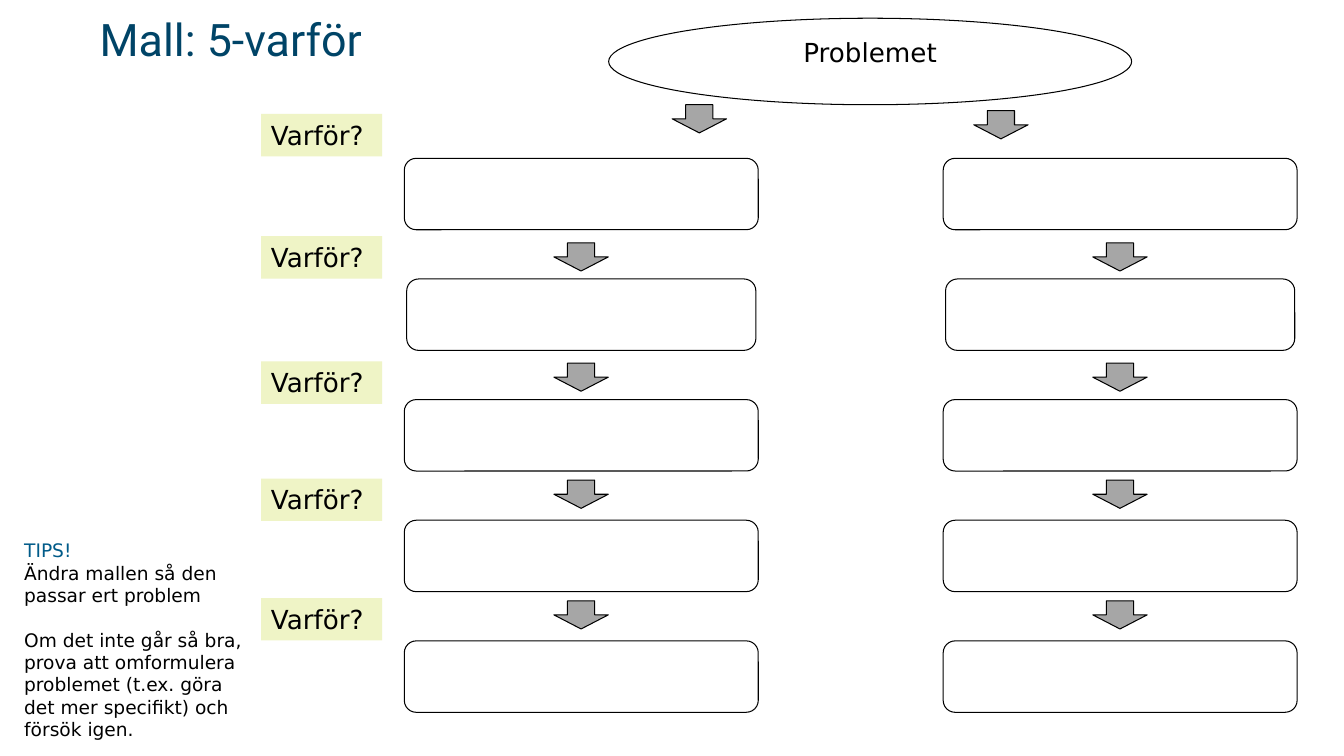
from pptx import Presentation
from pptx.dml.color import RGBColor
from pptx.enum.shapes import MSO_SHAPE
from pptx.enum.text import MSO_ANCHOR, MSO_AUTO_SIZE, PP_ALIGN
from pptx.util import Cm, Pt

ELLIPSE = MSO_SHAPE.OVAL
RECTANGLE = MSO_SHAPE.RECTANGLE
ROUNDED = MSO_SHAPE.ROUNDED_RECTANGLE
DOWN_ARROW = MSO_SHAPE.DOWN_ARROW
TOP = MSO_ANCHOR.TOP
GROW = MSO_AUTO_SIZE.SHAPE_TO_FIT_TEXT
LEFT, CENTER = PP_ALIGN.LEFT, PP_ALIGN.CENTER


def color(hex_string):
    return RGBColor.from_string(hex_string)


class TemplateSlide:
    BLACK, WHITE, GRAY, LIME = "000000", "FFFFFF", "A6A6A6", "EFF4C6"
    TITLE_BLUE, TIP_BLUE = "004467", "005B89"
    BODY_FONT, TITLE_FONT = "DejaVu Sans", "Roboto"
    LABEL_SIZE, TIP_SIZE, TITLE_SIZE = 18.7, 13.3, 32

    def __init__(self, slide):
        self.slide = slide

    def shape(self, kind, left, top, width, height, fill, outlined=True):
        shape = self.slide.shapes.add_shape(
            kind, Cm(left), Cm(top), Cm(width), Cm(height))
        shape.shadow.inherit = False
        shape.fill.solid()
        shape.fill.fore_color.rgb = color(fill)
        if outlined:
            shape.line.color.rgb = color(self.BLACK)
            shape.line.width = Pt(0.75)
        else:
            shape.line.fill.background()
        return shape

    def add_text(self, frame, paragraphs, size, font, align=LEFT):
        """Fill a frame from (text, color, space before) entries."""
        frame.word_wrap = True
        frame.vertical_anchor = TOP
        for index, (text, hex_string, space_before) in enumerate(paragraphs):
            paragraph = frame.add_paragraph() if index else frame.paragraphs[0]
            paragraph.alignment = align
            if space_before:
                paragraph.space_before = Pt(space_before)
            run = paragraph.add_run()
            run.text = text
            run.font.size = Pt(size)
            run.font.name = font
            run.font.color.rgb = color(hex_string)

    def text_box(self, left, top, width, height, paragraphs, size, font):
        box = self.slide.shapes.add_textbox(
            Cm(left), Cm(top), Cm(width), Cm(height))
        self.add_text(box.text_frame, paragraphs, size, font)
        box.text_frame.auto_size = GROW

    def problem(self, left, top, width, height):
        ellipse = self.shape(ELLIPSE, left, top, width, height, self.WHITE)
        self.add_text(ellipse.text_frame, [("Problemet", self.BLACK, 0)],
                      self.LABEL_SIZE, self.BODY_FONT, CENTER)

    def answer(self, left, top, width):
        self.shape(ROUNDED, left, top, width, 1.8, self.WHITE)

    def arrow(self, left, top):
        self.shape(DOWN_ARROW, left, top, 1.37, 0.71, self.GRAY)

    def why_label(self, top):
        label = self.shape(RECTANGLE, 6.58, top, 3.05, 1.07, self.LIME, False)
        self.add_text(label.text_frame, [("Varför?", self.BLACK, 0)],
                      self.LABEL_SIZE, self.BODY_FONT)
        label.text_frame.auto_size = GROW


def main():
    presentation = Presentation()
    presentation.slide_width = Cm(33.87)
    presentation.slide_height = Cm(19.05)
    template = TemplateSlide(
        presentation.slides.add_slide(presentation.slide_layouts[6]))

    template.problem(15.34, 0.46, 13.18, 2.18)

    answer_count, answer_width, answer_pitch = 5, 8.92, 3.04
    first_arrows = [(16.94, 2.64), (24.54, 2.79)]
    for column_left, first_arrow in zip((10.19, 23.77), first_arrows):
        for row in range(answer_count):
            inset = 0.06 if row == 1 else 0
            template.answer(column_left + inset, 3.99 + row * answer_pitch,
                            answer_width - 2 * inset)
        template.arrow(*first_arrow)
        for arrow_top in (6.12, 9.15, 12.1, 15.14):
            template.arrow(column_left + 3.77, arrow_top)

    for label_top in (2.87, 5.95, 9.11, 12.06, 15.07):
        template.why_label(label_top)

    template.text_box(2.26, 0.18, 13.18, 1.63,
                      [("Mall: 5-varför", template.TITLE_BLUE, 0)],
                      template.TITLE_SIZE, template.TITLE_FONT)
    tips = [
        ("TIPS!", template.TIP_BLUE, 0),
        ("Ändra mallen så den passar ert problem", template.BLACK, 0),
        ("Om det inte går så bra, prova att omformulera problemet "
         "(t.ex. göra det mer specifikt) och försök igen.",
         template.BLACK, 16),
    ]
    template.text_box(0.36, 13.46, 6.22, 5.38, tips,
                      template.TIP_SIZE, template.BODY_FONT)

    presentation.save("out.pptx")


if __name__ == "__main__":
    main()
